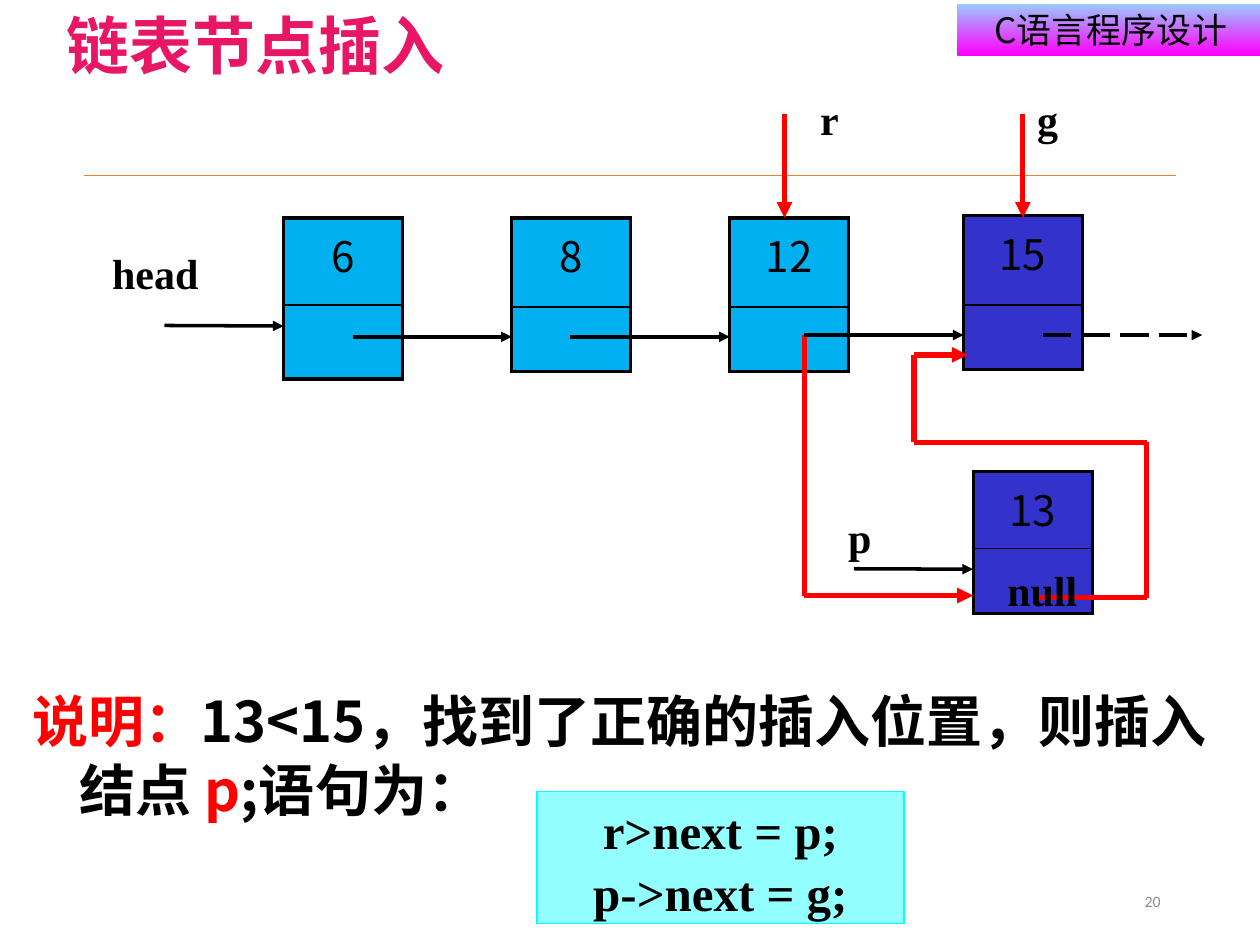
from itertools import pairwise
from lxml.etree import SubElement as Sub
from pptx import Presentation
from pptx.dml.color import RGBColor
from pptx.enum.dml import MSO_LINE as Dash
from pptx.enum.shapes import MSO_CONNECTOR as Conn, MSO_SHAPE as Form
from pptx.enum.text import MSO_ANCHOR as Anchor, PP_ALIGN as Align
from pptx.oxml.ns import qn
from pptx.util import Pt

SANS, SERIF = "Noto Sans CJK SC", "Times New Roman"


def paint(fill, tone, alpha=100):
    fill.solid()
    fill.fore_color.rgb = RGBColor.from_string(tone)
    if alpha < 100:
        node = fill._xPr.find(".//" + qn("a:srgbClr"))
        Sub(node, qn("a:alpha"), val=str(alpha * 1000))


def write(para, parts, align=Align.CENTER, **form):
    para.alignment = align
    for text, tone in parts:
        run = para.add_run()
        run.text = text
        for key, val in form.items():
            setattr(run.font, key, val)
        paint(run.font.fill, tone)
        Sub(run.font._element, qn("a:ea"), typeface=form["name"])


deck = Presentation()
deck.slide_width, deck.slide_height = Pt(720), Pt(540)
slide = deck.slides.add_slide(deck.slide_layouts[5])
shapes = slide.shapes

# Course banner
banner = shapes.add_shape(Form.RECTANGLE, Pt(547), Pt(2), Pt(175.5), Pt(29.5))
banner.shadow.inherit = False
banner.line.fill.background()
banner.fill.gradient()
banner.fill.gradient_angle = 270
for stop, tone, spot in zip(banner.fill.gradient_stops, ("99CCFF", "FF00FF"), (0, 1)):
    stop.color.rgb = RGBColor.from_string(tone)
    stop.position = spot
banner.text_frame.vertical_anchor = Anchor.MIDDLE
write(banner.text_frame.paragraphs[0], [("C语言程序设计", "000000")],
      name=SANS, size=Pt(20))

# Title
title = shapes.title
title.left, title.top, title.width, title.height = Pt(14.4), Pt(0), Pt(263.5), Pt(29.5)
title.text_frame.word_wrap = False
title.text_frame.vertical_anchor = Anchor.TOP
write(title.text_frame.paragraphs[0], [("链表节点插入", "E81766")],
      name="Noto Sans CJK JP", size=Pt(36), bold=True)

# List nodes: value, left, top, row heights, fill, opacity
nodes = [
    ("6", 162, 124.5, (49.8, 42.3), "00B0F0", 100),
    ("8", 292.4, 124.5, (51, 36.8), "00B0F0", 100),
    ("12", 417, 124.5, (51, 36.8), "00B0F0", 100),
    ("13", 556.2, 269.5, (44, 37), "3333CC", 50),
    ("15", 550.6, 123.3, (51, 36.8), "3333CC", 50),
]
for value, left, top, rows, tone, alpha in nodes:
    table = shapes.add_table(2, 1, Pt(left), Pt(top), Pt(68), Pt(sum(rows))).table
    table.first_row = table.horz_banding = False
    for i, high in enumerate(rows):
        table.rows[i].height = Pt(high)
        cell = table.cell(i, 0)
        props = cell._tc.get_or_add_tcPr()
        for side in "LRTB":
            inner = side == "BT"[i]
            edge = Sub(props, qn("a:ln" + side), w=str(Pt(1 if inner else 2.25)))
            Sub(Sub(edge, qn("a:solidFill")), qn("a:srgbClr"), val="000000")
        paint(cell.fill, tone, alpha)
    write(table.cell(0, 0).text_frame.paragraphs[0], [(value, "000000")],
          name=SANS, size=Pt(24))

# Rule, pointers and links: points, colour, width, arrow, dash
routes = [
    ([(48, 100), (672, 100)], "ED7D31", 0.25, False, None),
    ([(94, 186), (162, 186.3)], "000000", 2, True, None),
    ([(201.6, 192.5), (292.4, 192.5)], "000000", 2, True, None),
    ([(326, 192.5), (417, 192.5)], "000000", 2, True, None),
    ([(488, 325), (556, 325.3)], "000000", 2, True, None),
    ([(459.6, 191.5), (459.6, 340.3), (556, 340.3)], "FF0000", 3, True, None),
    ([(459.6, 191.5), (550.6, 191.5)], "000000", 2, True, None),
    ([(448.3, 65), (448.3, 124.5)], "FF0000", 3, True, None),
    ([(584.5, 65), (584.5, 124.5)], "FF0000", 3, True, None),
    ([(596, 191.5), (687, 191.5)], "000000", 2, True, Dash.LONG_DASH),
    ([(593, 341.5), (655.2, 341.5), (655.2, 252.7), (522.3, 252.7),
      (522.3, 202.8), (553, 202.8)], "FF0000", 3, True, None),
]
for stops, tone, wide, arrow, dash in routes:
    for start, end in pairwise(stops):
        link = shapes.add_connector(Conn.STRAIGHT, *map(Pt, start + end))
        link.line.width = Pt(wide)
        paint(link.line.fill, tone)
        if dash:
            link.line.dash_style = dash
        if arrow and end == stops[-1]:
            Sub(link.line._get_or_add_ln(), qn("a:tailEnd"), type="triangle")
        Sub(link._element.spPr, qn("a:effectLst"))

# Labels
labels = [
    ("head", 57, 138, 74, Align.LEFT),
    ("p", 454.3, 288.7, 74, Align.CENTER),
    ("g", 561.6, 49.7, 74, Align.CENTER),
    ("r", 437, 49.7, 74, Align.CENTER),
    ("null", 561.6, 319, 68, Align.CENTER),
]
for text, left, top, wide, align in labels:
    frame = shapes.add_textbox(Pt(left), Pt(top), Pt(wide), Pt(36)).text_frame
    frame.word_wrap = True
    write(frame.paragraphs[0], [(text, "000000")], align,
          name=SERIF, size=Pt(24), bold=True)

# Explanation with hanging indent
note = shapes.add_textbox(Pt(11.5), Pt(387.4), Pt(708), Pt(84.2)).text_frame
note.word_wrap = True
para = note.paragraphs[0]
para.line_spacing = Pt(39.5)
props = para._p.get_or_add_pPr()
props.set("marL", str(Pt(27)))
props.set("indent", str(Pt(-27)))
write(para, [("说明：", "FF0000"),
             ("13<15，找到了正确的插入位置，则插入结点 ", "000000"),
             ("p", "FF0000"), (";语句为：", "000000")],
      Align.LEFT, name=SANS, size=Pt(32), bold=True)

# Code box
code = shapes.add_shape(Form.RECTANGLE, Pt(306.7), Pt(452.2), Pt(209.8), Pt(75.5))
code.shadow.inherit = False
paint(code.fill, "66FFFF", 70)
paint(code.line.fill, "00FFFF")
code.line.width = Pt(1)
frame = code.text_frame
frame.vertical_anchor = Anchor.TOP
for i, text in enumerate(("r>next = p;", "p->next = g;")):
    para = frame.add_paragraph() if i else frame.paragraphs[0]
    para.line_spacing = 1.05
    write(para, [(text, "000000")], name=SERIF, size=Pt(28), bold=True)

# Page number
frame = shapes.add_textbox(Pt(508.3), Pt(500.5), Pt(162), Pt(28.8)).text_frame
frame.vertical_anchor = Anchor.MIDDLE
frame.word_wrap = True
write(frame.paragraphs[0], [("20", "8C8C8C")], Align.RIGHT, name="Calibri", size=Pt(9))

deck.save("out.pptx")
